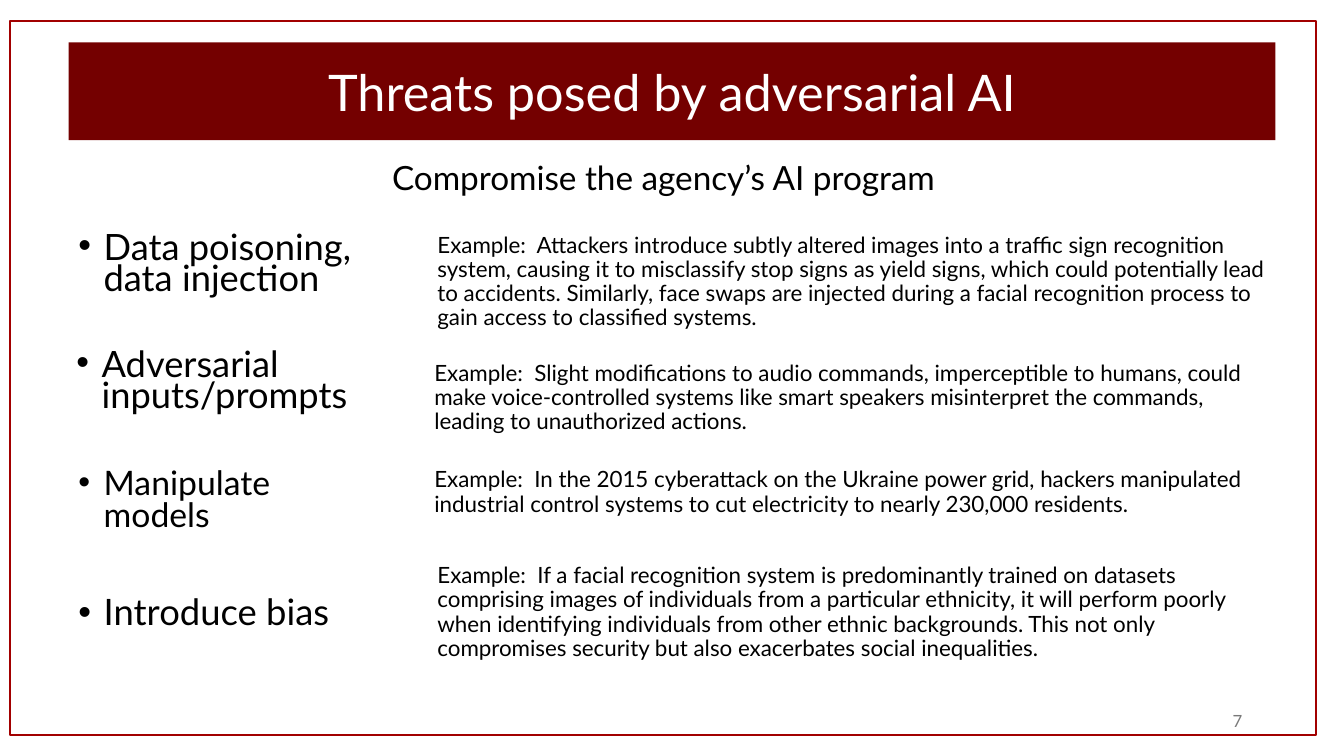
from lxml.etree import SubElement
from pptx import Presentation
from pptx.dml.color import RGBColor
from pptx.enum.shapes import MSO_SHAPE
from pptx.enum.text import MSO_ANCHOR, PP_ALIGN
from pptx.oxml.ns import qn
from pptx.util import Inches, Pt

MAROON = RGBColor(0x74, 0x00, 0x00)
RED = RGBColor(0xA2, 0x00, 0x00)
WHITE = RGBColor(0xFF, 0xFF, 0xFF)
BLACK = RGBColor(0x00, 0x00, 0x00)
GRAY = RGBColor(0x79, 0x79, 0x79)

THREATS = [
    ("Data poisoning, data injection", (0.68, 2.27, 2.97, 0.76), 25.9, 0.7,
     "Example:  Attackers introduce subtly altered images into a traffic sign "
     "recognition system, causing it to misclassify stop signs as yield signs, "
     "which could potentially lead to accidents. Similarly, face swaps are "
     "injected during a facial recognition process to gain access to "
     "classified systems.", (4.24, 2.27, 8.44, 0.97)),
    ("Adversarial inputs/prompts", (0.66, 3.43, 3, 0.76), 25.9, 0.7,
     "Example:  Slight modifications to audio commands, imperceptible to "
     "humans, could make voice-controlled systems like smart speakers "
     "misinterpret the commands, leading to unauthorized actions.",
     (4.21, 3.54, 8.44, 0.76)),
    ("Manipulate models", (0.68, 4.6, 2.97, 0.76), 24.1, 0.8,
     "Example:  In the 2015 cyberattack on the Ukraine power grid, hackers "
     "manipulated industrial control systems to cut electricity to nearly "
     "230,000 residents.", (4.21, 4.6, 8.44, 0.66)),
    ("Introduce bias", (0.68, 5.76, 2.97, 0.66), 26, 0.9,
     "Example:  If a facial recognition system is predominantly trained on "
     "datasets comprising images of individuals from a particular ethnicity, "
     "it will perform poorly when identifying individuals from other ethnic "
     "backgrounds. This not only compromises security but also exacerbates "
     "social inequalities.", (4.24, 5.55, 8.47, 1.1)),
]


def add_rect(slide, box, fill=None, line=None):
    """Add a plain rectangle with an optional fill and outline."""
    rect = slide.shapes.add_shape(MSO_SHAPE.RECTANGLE, *map(Inches, box))
    rect.shadow.inherit = False
    if fill is None:
        rect.fill.background()
    else:
        rect.fill.solid()
        rect.fill.fore_color.rgb = fill
    if line is None:
        rect.line.fill.background()
    else:
        rect.line.color.rgb = line
        rect.line.width = Pt(1.5)
    return rect


def set_text(shape, text, size, color=BLACK, align=PP_ALIGN.LEFT,
             anchor=MSO_ANCHOR.MIDDLE, space=1.0, before=10, bullet=False):
    """Write one styled paragraph into a shape."""
    frame = shape.text_frame
    frame.word_wrap = True
    frame.vertical_anchor = anchor
    para = frame.paragraphs[0]
    para.text = text
    para.alignment = align
    para.line_spacing = space
    para.space_before = Pt(before)
    if bullet:
        props = para._p.get_or_add_pPr()
        props.set("marL", str(Inches(0.25)))
        props.set("indent", str(-Inches(0.25)))
        SubElement(props, qn("a:buFont"), typeface="Arial")
        SubElement(props, qn("a:buChar"), char="•")
    para.font.name = "Lato"
    para.font.size = Pt(size)
    para.font.color.rgb = color


def add_text(slide, box, text, size, **style):
    """Add a text box holding one paragraph."""
    shape = slide.shapes.add_textbox(*map(Inches, box))
    set_text(shape, text, size, **style)


def main():
    """Build the slide on adversarial AI threats."""
    deck = Presentation()
    deck.slide_width = Inches(13.33)
    deck.slide_height = Inches(7.5)
    slide = deck.slides.add_slide(deck.slide_layouts[6])

    title = add_rect(slide, (0.68, 0.42, 11.97, 0.97), fill=MAROON)
    set_text(title, "Threats posed by adversarial AI", 36, color=WHITE,
             align=PP_ALIGN.CENTER)
    add_rect(slide, (0.1, 0.21, 12.95, 7.08), line=RED)
    add_text(slide, (9.42, 6.95, 3, 0.4), "7", 12, color=GRAY,
             align=PP_ALIGN.RIGHT, before=0)
    add_text(slide, (3.79, 1.59, 5.76, 0.53),
             "Compromise the agency’s AI program", 23.8,
             anchor=MSO_ANCHOR.TOP, space=0.8)
    for threat, left, size, space, example, right in THREATS:
        add_text(slide, left, threat, size, space=space, bullet=True)
        add_text(slide, right, example, 16, anchor=MSO_ANCHOR.TOP, space=0.9)

    deck.save("out.pptx")


if __name__ == "__main__":
    main()
